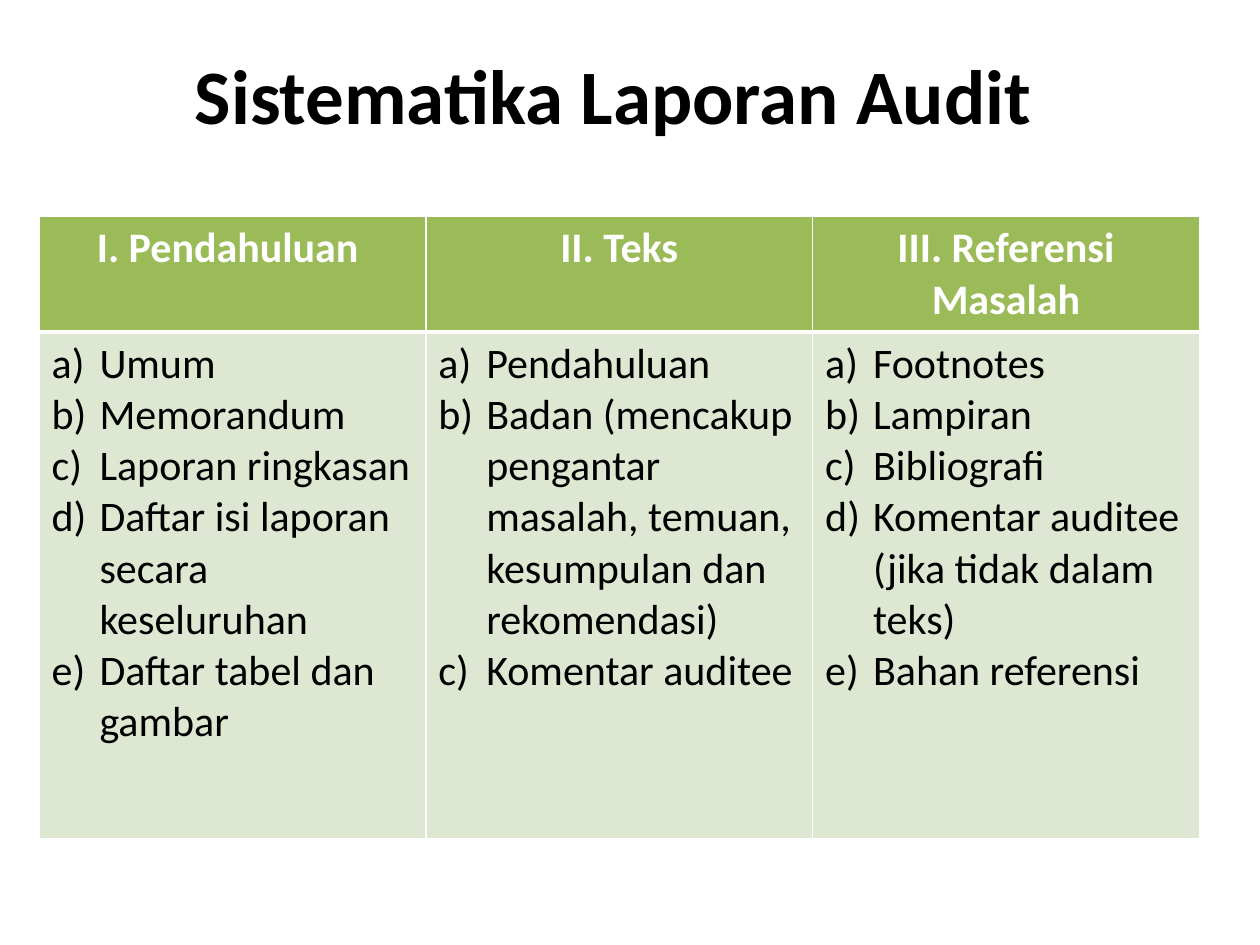
from lxml.etree import SubElement
from pptx import Presentation
from pptx.dml.color import RGBColor
from pptx.enum.text import MSO_ANCHOR, MSO_AUTO_SIZE, PP_ALIGN
from pptx.oxml import parse_xml
from pptx.oxml.ns import nsdecls, qn
from pptx.util import Inches, Pt

TITLE = "Sistematika Laporan Audit"
SECTIONS = [
    ("I. Pendahuluan ", ["Umum", "Memorandum", "Laporan ringkasan",
                         "Daftar isi laporan secara keseluruhan",
                         "Daftar tabel dan gambar"]),
    ("II. Teks", ["Pendahuluan",
                  "Badan (mencakup pengantar masalah, temuan, "
                  "kesumpulan dan rekomendasi)",
                  "Komentar auditee"]),
    ("III. Referensi Masalah", ["Footnotes", "Lampiran", "Bibliografi",
                                "Komentar auditee (jika tidak dalam teks)",
                                "Bahan referensi"]),
]


def rgb(value):
    return RGBColor.from_string(value)


class Deck:
    font = "Calibri"
    black, white = "000000", "FFFFFF"
    green, pale = "9BBB59", "DEE7D1"
    indent = Inches(0.38)

    def __init__(self, prs):
        # Layout 5 holds a title only
        self.s = prs.slides.add_slide(prs.slide_layouts[5])

    def run(self, p, text, size, color, bold=False):
        r = p.add_run()
        r.text = text
        r.font.name, r.font.size, r.font.bold = self.font, Pt(size), bold
        r.font.color.rgb = rgb(color)

    def title(self, text, left, top, width, height):
        sp = self.s.shapes.title
        sp.left, sp.top = Inches(left), Inches(top)
        sp.width, sp.height = Inches(width), Inches(height)
        tf = sp.text_frame
        tf.auto_size = MSO_AUTO_SIZE.NONE
        tf.vertical_anchor = MSO_ANCHOR.MIDDLE
        p = tf.paragraphs[0]
        p.alignment = PP_ALIGN.CENTER
        self.run(p, text, 44, self.black, bold=True)

    def letter(self, p):
        """Number a paragraph a), b), c) with a hanging indent."""
        pPr = p._p.get_or_add_pPr()
        pPr.set("marL", str(self.indent))
        pPr.set("indent", str(-self.indent))
        SubElement(pPr, qn("a:buFont"), typeface="+mj-lt")
        SubElement(pPr, qn("a:buAutoNum"), type="alphaLcParenR")

    def cell(self, cell, fill, top, bottom):
        """Fill a cell and give it white borders, widths in points."""
        cell.fill.solid()
        cell.fill.fore_color.rgb = rgb(fill)
        sides = {"lnL": 1, "lnR": 1, "lnT": top, "lnB": bottom}
        tcPr = cell._tc.get_or_add_tcPr()
        for i, (side, width) in enumerate(sides.items()):
            tcPr.insert(i, parse_xml(
                f'<a:{side} {nsdecls("a")} w="{Pt(width)}"><a:solidFill>'
                f'<a:srgbClr val="{self.white}"/></a:solidFill></a:{side}>'))

    def table(self, sections, left, top, col_width, row_heights):
        shape = self.s.shapes.add_table(
            len(row_heights), len(sections), Inches(left), Inches(top),
            Inches(col_width * len(sections)), Inches(sum(row_heights)))
        table = shape.table
        for row, height in zip(table.rows, row_heights):
            row.height = Inches(height)
        for i, (heading, items) in enumerate(sections):
            table.columns[i].width = Inches(col_width)
            head, body = table.cell(0, i), table.cell(1, i)
            # Heading
            self.cell(head, self.green, top=1, bottom=3)
            p = head.text_frame.paragraphs[0]
            p.alignment = PP_ALIGN.CENTER
            self.run(p, heading, 24, self.white, bold=True)
            # Lettered list
            self.cell(body, self.pale, top=3, bottom=1)
            tf = body.text_frame
            for n, item in enumerate(items):
                p = tf.add_paragraph() if n else tf.paragraphs[0]
                self.letter(p)
                self.run(p, item, 24, self.black)


def main():
    prs = Presentation()
    prs.slide_width, prs.slide_height = Inches(10), Inches(7.5)
    deck = Deck(prs)
    deck.title(TITLE, 0.62, 0.31, 8.5, 0.86)
    deck.table(SECTIONS, 0.31, 1.72, 3.07, [0.9, 4.02])
    prs.save("out.pptx")


if __name__ == "__main__":
    main()
